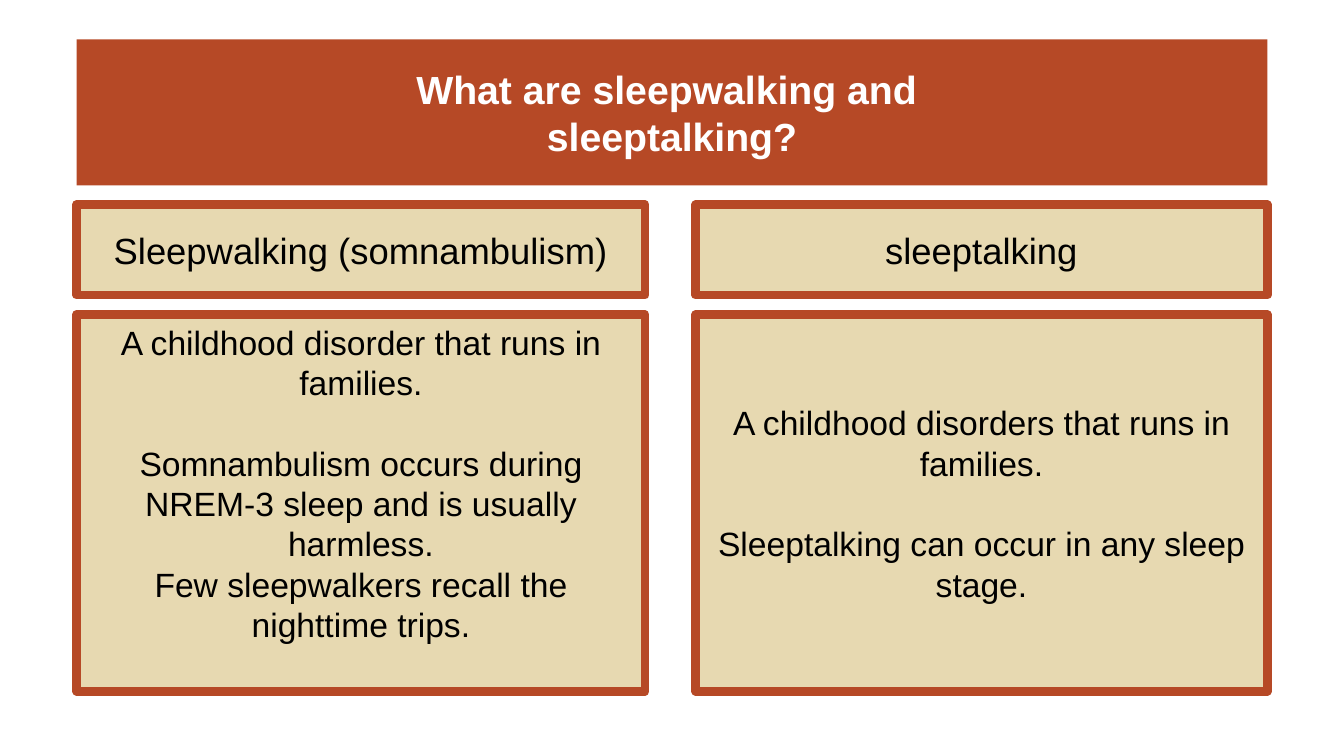
from dataclasses import dataclass

from pptx import Presentation
from pptx.dml.color import RGBColor
from pptx.enum.shapes import MSO_SHAPE
from pptx.enum.text import MSO_ANCHOR, MSO_AUTO_SIZE, PP_ALIGN
from pptx.slide import Slide
from pptx.text.text import TextFrame, _Paragraph as Paragraph
from pptx.util import Inches, Pt

RUST = RGBColor(0xB6, 0x49, 0x26)
SAND = RGBColor(0xE7, 0xD9, 0xB1)
BLACK = RGBColor(0, 0, 0)
WHITE = RGBColor(0xFF, 0xFF, 0xFF)

FONT = "Arial"
LINE_FACTOR = 1.2
TITLE_SIZE, HEADING_SIZE, BODY_SIZE = 28, 26, 24
HEADING_TOP, HEADING_HEIGHT = 2.03, 0.9
BODY_TOP, BODY_HEIGHT = 3.12, 3.74
INSET = 0.05
BODY_LINE = BODY_SIZE * LINE_FACTOR / 72


@dataclass(frozen=True)
class Column:
    left: float
    width: float
    heading: str
    facts: tuple[str, ...]
    bottom_inset: float = INSET


COLUMNS = (
    Column(
        0.76, 5.64, "Sleepwalking (somnambulism)",
        (
            "A childhood disorder that runs in families.",
            "Somnambulism occurs during NREM-3 sleep and is usually harmless.",
            "Few sleepwalkers recall the nighttime trips.",
        ),
        bottom_inset=INSET + BODY_LINE,
    ),
    Column(
        6.9, 5.67, "sleeptalking",
        (
            "A childhood disorders that runs in families.",
            "Sleeptalking can occur in any sleep stage.",
        ),
    ),
)


def add_text(paragraph: Paragraph, text: str, size: float, color: RGBColor,
             bold: bool = False) -> None:
    paragraph.alignment = PP_ALIGN.CENTER
    paragraph.line_spacing = Pt(size * LINE_FACTOR)
    run = paragraph.add_run()
    run.text = text
    run.font.name = FONT
    run.font.size = Pt(size)
    run.font.bold = bold
    run.font.color.rgb = color


def set_frame(frame: TextFrame) -> None:
    frame.word_wrap = True
    frame.auto_size = MSO_AUTO_SIZE.NONE
    frame.vertical_anchor = MSO_ANCHOR.MIDDLE


def add_title(slide: Slide) -> None:
    title = slide.shapes.title
    title.left, title.top = Inches(0.76), Inches(0.39)
    title.width, title.height = Inches(11.81), Inches(1.45)
    title.fill.solid()
    title.fill.fore_color.rgb = RUST
    set_frame(title.text_frame)
    paragraph = title.text_frame.paragraphs[0]
    add_text(paragraph, "What are sleepwalking and ", TITLE_SIZE, WHITE, bold=True)
    paragraph.add_line_break()
    add_text(paragraph, "sleeptalking?", TITLE_SIZE, WHITE, bold=True)


def add_panel(slide: Slide, column: Column, top: float, height: float) -> TextFrame:
    """Draw a framed panel in the column and return its text frame."""
    panel = slide.shapes.add_shape(
        MSO_SHAPE.RECTANGLE, Inches(column.left), Inches(top),
        Inches(column.width), Inches(height))
    panel.shadow.inherit = False
    panel.fill.solid()
    panel.fill.fore_color.rgb = SAND
    panel.line.color.rgb = RUST
    panel.line.width = Pt(6)
    set_frame(panel.text_frame)
    return panel.text_frame


def add_column(slide: Slide, column: Column) -> None:
    heading = add_panel(slide, column, HEADING_TOP, HEADING_HEIGHT)
    add_text(heading.paragraphs[0], column.heading, HEADING_SIZE, BLACK)

    body = add_panel(slide, column, BODY_TOP, BODY_HEIGHT)
    body.margin_bottom = Inches(column.bottom_inset)
    for index, fact in enumerate(column.facts):
        paragraph = body.add_paragraph() if index else body.paragraphs[0]
        add_text(paragraph, fact, BODY_SIZE, BLACK)
    body.paragraphs[0].space_after = Inches(BODY_LINE)


def main() -> None:
    deck = Presentation()
    deck.slide_width, deck.slide_height = Inches(13.33), Inches(7.5)
    title_only = deck.slide_layouts.get_by_name("Title Only")
    slide = deck.slides.add_slide(title_only)
    add_title(slide)
    for column in COLUMNS:
        add_column(slide, column)
    deck.save("out.pptx")


if __name__ == "__main__":
    main()
